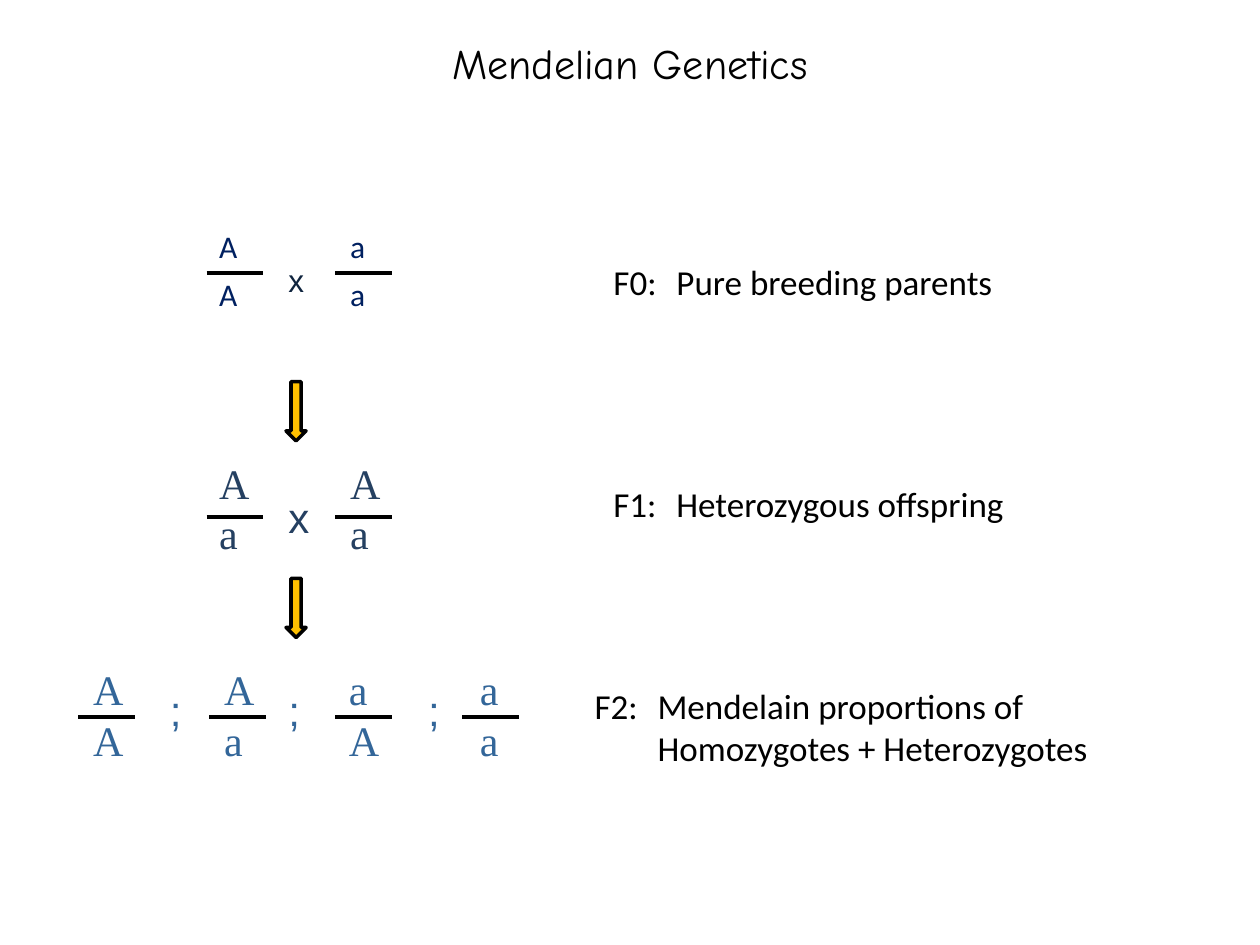
from lxml.etree import SubElement
from pptx import Presentation
from pptx.dml.color import RGBColor
from pptx.enum.shapes import MSO_CONNECTOR, MSO_SHAPE
from pptx.enum.text import MSO_ANCHOR, PP_ALIGN
from pptx.oxml.ns import qn
from pptx.util import Inches, Pt


def color(hex_string):
    return RGBColor.from_string(hex_string)


class GeneticsSlide:
    """Hold the style and the current slide and draw each kind of element."""

    black = "000000"
    gold = "FFC000"
    bar_width = 0.45

    def __init__(self, presentation):
        self.slide = presentation.slides.add_slide(presentation.slide_layouts[5])

    def set_text(self, text_frame, text, size, font, hex_color, space_after=0):
        text_frame.text = text
        for paragraph in text_frame.paragraphs:
            paragraph.space_after = Pt(space_after)
            for run in paragraph.runs:
                run.font.size = Pt(size)
                run.font.name = font
                run.font.color.rgb = color(hex_color)

    def title(self, text):
        shape = self.slide.shapes.title
        shape.left, shape.top = Inches(0.75), Inches(0.25)
        shape.width, shape.height = Inches(8.5), Inches(0.92)
        self.set_text(shape.text_frame, text, 24, "Comic Neue", self.black)
        shape.text_frame.vertical_anchor = MSO_ANCHOR.TOP
        shape.text_frame.paragraphs[0].alignment = PP_ALIGN.CENTER

    def label(self, text, left, top, width, height, *style):
        box = self.slide.shapes.add_textbox(
            Inches(left), Inches(top), Inches(width), Inches(height))
        box.text_frame.word_wrap = True
        self.set_text(box.text_frame, text, *style)

    def bar(self, left, top):
        connector = self.slide.shapes.add_connector(
            MSO_CONNECTOR.STRAIGHT, Inches(left), Inches(top),
            Inches(left + self.bar_width), Inches(top))
        connector.line.color.rgb = color(self.black)
        connector.line.width = Pt(2.25)
        SubElement(connector._element.spPr, qn("a:effectLst"))

    def genotype(self, alleles, left, top, width, height, bar_left, bar_top, *style):
        self.label("\n".join(alleles), left, top, width, height, *style)
        self.bar(bar_left, bar_top)

    def down_arrow(self, top):
        arrow = self.slide.shapes.add_shape(
            MSO_SHAPE.DOWN_ARROW, Inches(2.27), Inches(top), Inches(0.16), Inches(0.47))
        arrow.shadow.inherit = False
        arrow.fill.solid()
        arrow.fill.fore_color.rgb = color(self.gold)
        arrow.line.color.rgb = color(self.black)
        arrow.line.width = Pt(2)


def main():
    presentation = Presentation()
    presentation.slide_width, presentation.slide_height = Inches(10), Inches(7.5)
    slide = GeneticsSlide(presentation)
    slide.title("Mendelian Genetics")

    parent_style = (18, "Calibri", "002060", 6)
    offspring_style = (24, "Times New Roman", "254061")
    grandchild_style = (24, "Times New Roman", "336699")
    generations = [
        (1.75, 0.79, 2.17, parent_style,
         [("AA", 1.64, 0.35, 1.64), ("aa", 2.68, 0.32, 2.66)]),
        (3.58, 0.91, 4.1, offspring_style,
         [("Aa", 1.64, 0.45, 1.64), ("Aa", 2.68, 0.45, 2.66)]),
        (5.22, 0.91, 5.69, grandchild_style,
         [("AA", 0.64, 0.44, 0.62), ("Aa", 1.68, 0.45, 1.66),
          ("aA", 2.67, 0.44, 2.66), ("aa", 3.71, 0.35, 3.67)]),
    ]
    for top, height, bar_top, style, genotypes in generations:
        for alleles, left, width, bar_left in genotypes:
            slide.genotype(alleles, left, top, width, height, bar_left, bar_top, *style)

    slide.label("x", 2.19, 2.02, 0.33, 0.4, 18, "Arial", "0F243E")
    slide.label("x", 2.19, 3.85, 0.37, 0.51, 24, "Arial", "254061")
    for left in (1.25, 2.19, 3.3):
        slide.label(";", left, 5.38, 0.3, 0.51, 24, "Arial", "336699")

    for top in (3.03, 4.59):
        slide.down_arrow(top)

    descriptions = [
        ("F0:\tPure breeding parents", 4.77, 2.02, 3.75, 0.44),
        ("F1:\tHeterozygous offspring", 4.77, 3.78, 3.84, 0.44),
        ("F2:\tMendelain proportions of\n\tHomozygotes + Heterozygotes",
         4.62, 5.38, 4.65, 0.77),
    ]
    for description in descriptions:
        slide.label(*description, 20, "Calibri", slide.black)

    presentation.save("out.pptx")


if __name__ == "__main__":
    main()
